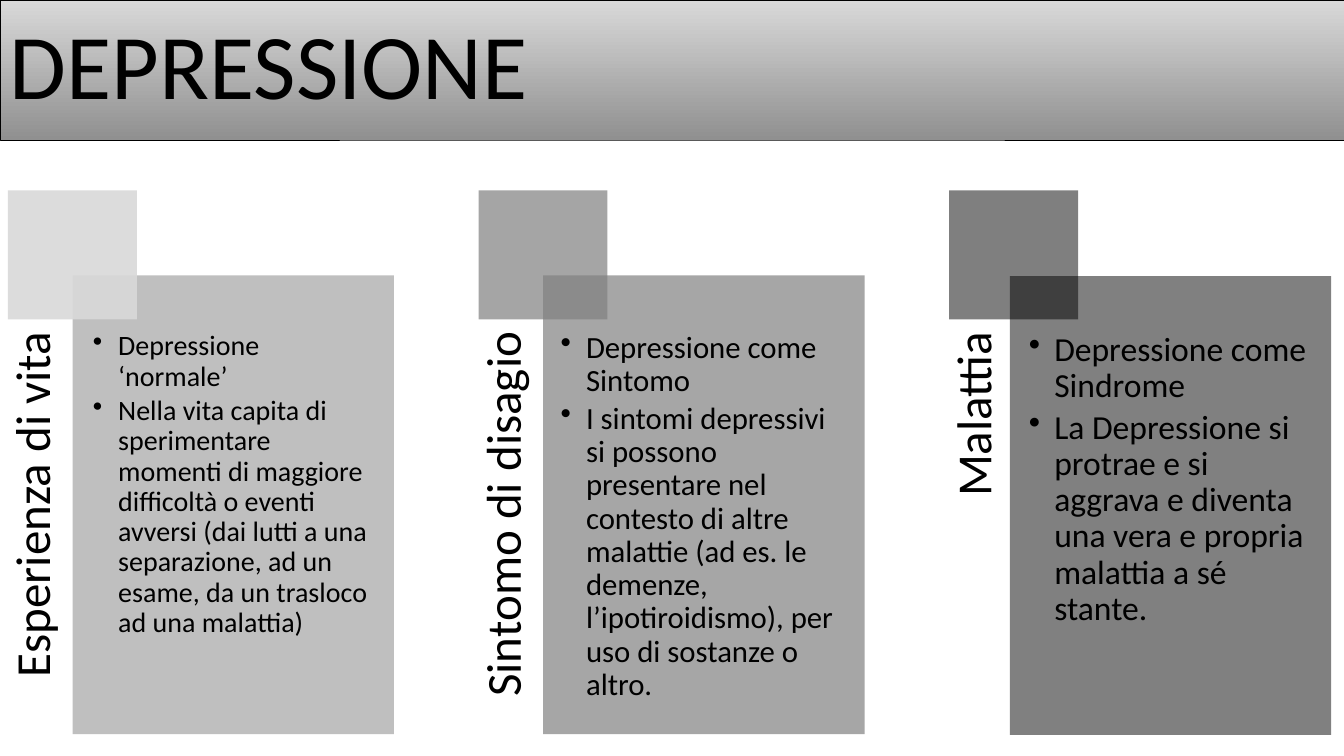
from dataclasses import dataclass

from lxml import etree
from pptx import Presentation
from pptx.dml.color import RGBColor
from pptx.enum.shapes import MSO_SHAPE
from pptx.enum.text import MSO_ANCHOR, PP_ALIGN
from pptx.oxml.ns import qn
from pptx.util import Cm, Pt


@dataclass(frozen=True)
class Theme:
    font: str = "Calibri"
    text: RGBColor = RGBColor(0, 0, 0)
    title_top: RGBColor = RGBColor(0xD9, 0xD9, 0xD9)
    title_bottom: RGBColor = RGBColor(0x90, 0x90, 0x90)
    panels: tuple = ("BFBFBF", "A6A6A6", "808080")
    squares: tuple = (("D9D9D9", 90), ("808080", 70), ("000000", 50))
    title_size: int = 66
    label_size: int = 35
    body_sizes: tuple = (20, 22, 24)


theme = Theme()

# Vertical label, bullet texts, panel offset from its square, panel top, inset
columns = [
    ("Esperienza di vita",
     ["Depressione ‘normale’",
      "Nella vita capita di sperimentare momenti di maggiore difficoltà o eventi "
      "avversi (dai lutti a una separazione, ad un esame, da un trasloco ad una malattia)"],
     1.63, 6.94, 0.51),
    ("Sintomo di disagio",
     ["Depressione come Sintomo",
      "I sintomi depressivi si possono presentare nel contesto di altre malattie "
      "(ad es. le demenze, l’ipotiroidismo), per uso di sostanze o altro."],
     1.63, 6.94, 0.44),
    ("Malattia",
     ["Depressione come Sindrome",
      "La Depressione si protrae e si aggrava e diventa una vera e propria "
      "malattia a sé stante."],
     1.53, 6.96, 0.48),
]
first_left, column_step = 0.2, 11.86
square_top, square_size = 4.8, 3.25
panel_width, panel_height = 8.1, 11.56
label_top, label_height = 6.94, 1.63
text_start = 1.42


def add_rectangle(left, top, width, height):
    shape = slide.shapes.add_shape(
        MSO_SHAPE.RECTANGLE, Cm(left), Cm(top), Cm(width), Cm(height))
    shape.shadow.inherit = False
    shape.line.fill.background()
    return shape


def style_paragraph(paragraph, text, size, alignment=PP_ALIGN.LEFT):
    paragraph.text = text
    paragraph.alignment = alignment
    paragraph.line_spacing = 0.9
    paragraph.font.name = theme.font
    paragraph.font.size = Pt(size)
    paragraph.font.color.rgb = theme.text


presentation = Presentation()
presentation.slide_width = Cm(33.87)
presentation.slide_height = Cm(19.05)
slide = presentation.slides.add_slide(presentation.slide_layouts[6])

for index, (label, bullets, panel_offset, panel_top, inset) in enumerate(columns):
    left = first_left + index * column_step

    # The label is turned about its centre, so its box is laid out sideways
    label_box = slide.shapes.add_textbox(
        Cm(left + (label_height - panel_height) / 2),
        Cm(label_top + (panel_height - label_height) / 2),
        Cm(panel_height), Cm(label_height))
    label_box.rotation = 270
    frame = label_box.text_frame
    frame.word_wrap = True
    frame.margin_left = frame.margin_top = frame.margin_bottom = 0
    frame.margin_right = Cm(text_start)
    style_paragraph(frame.paragraphs[0], label, theme.label_size, PP_ALIGN.RIGHT)

    panel = add_rectangle(left + panel_offset, panel_top, panel_width, panel_height)
    panel.fill.solid()
    panel.fill.fore_color.rgb = RGBColor.from_string(theme.panels[index])
    frame = panel.text_frame
    frame.word_wrap = True
    frame.vertical_anchor = MSO_ANCHOR.TOP
    frame.margin_left = frame.margin_right = frame.margin_bottom = Cm(inset)
    frame.margin_top = Cm(text_start)
    size = theme.body_sizes[index]
    for number, bullet in enumerate(bullets):
        paragraph = frame.add_paragraph() if number else frame.paragraphs[0]
        style_paragraph(paragraph, bullet, size)
        paragraph.space_after = Pt(0.15 * size)
        properties = paragraph._p.get_or_add_pPr()
        properties.set("marL", str(Cm(0.64)))
        properties.set("indent", str(-Cm(0.64)))
        mark = etree.Element(qn("a:buChar"), char="•")
        properties.find(qn("a:defRPr")).addprevious(mark)

    square = add_rectangle(left, square_top, square_size, square_size)
    color, opacity = theme.squares[index]
    square.fill.solid()
    square.fill.fore_color.rgb = RGBColor.from_string(color)
    color_element = square._element.spPr.find(qn("a:solidFill"))[0]
    etree.SubElement(color_element, qn("a:alpha"), val=str(opacity * 1000))

title = add_rectangle(0, 0, 33.87, 3.53)
title.fill.gradient()
title.fill.gradient_angle = 270
for stop, color in zip(title.fill.gradient_stops, (theme.title_top, theme.title_bottom)):
    stop.color.rgb = color
title.line.color.rgb = theme.text
title.line.width = Pt(0.5)
title.text_frame.word_wrap = True
title.text_frame.vertical_anchor = MSO_ANCHOR.MIDDLE
style_paragraph(title.text_frame.paragraphs[0], "DEPRESSIONE", theme.title_size)

presentation.save("out.pptx")
